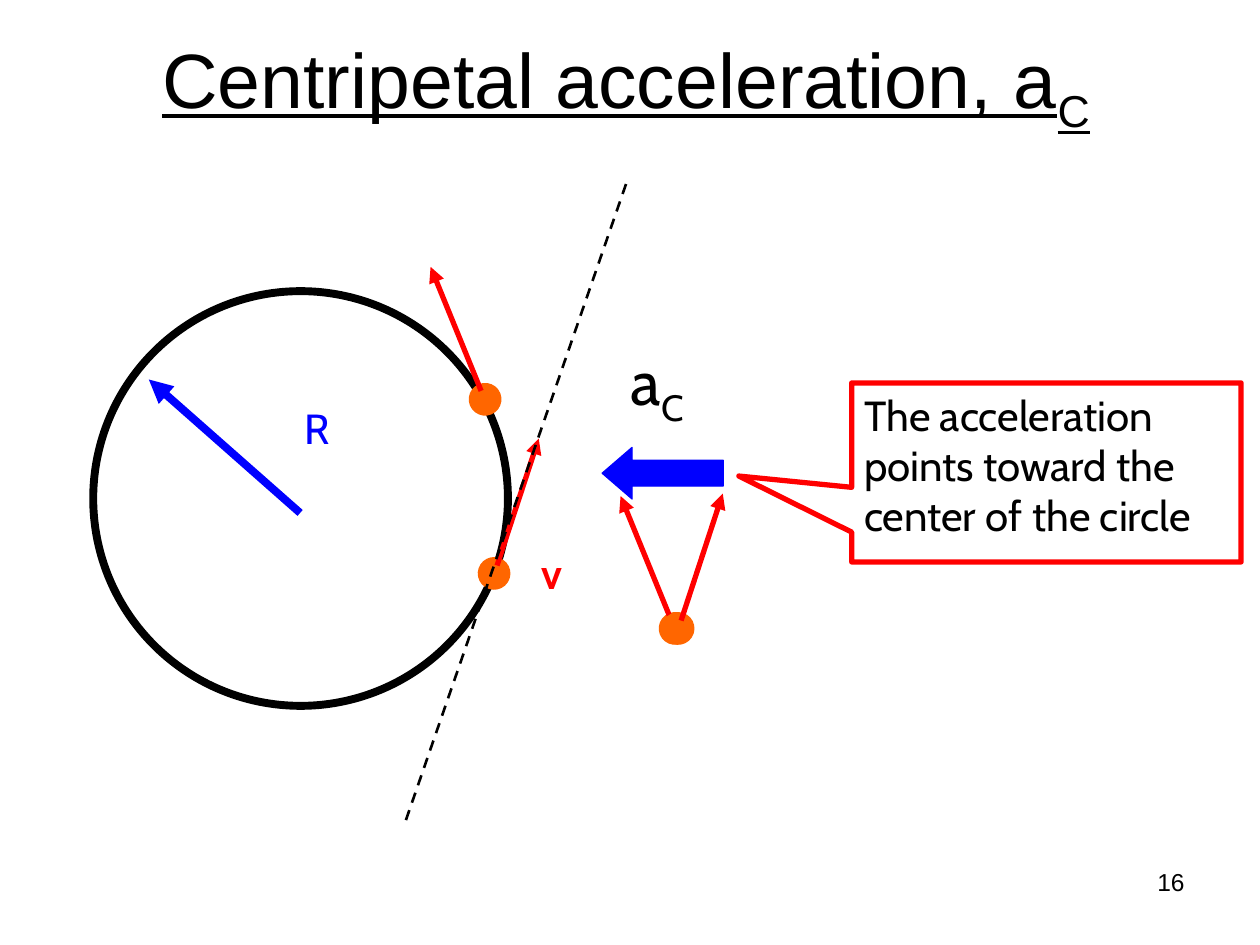
from lxml import etree
from pptx import Presentation
from pptx import util as u
from pptx.dml.color import RGBColor
from pptx.enum import dml, shapes, text
from pptx.oxml.ns import qn

BLACK = RGBColor(0x00, 0x00, 0x00)
WHITE = RGBColor(0xFF, 0xFF, 0xFF)
RED = RGBColor(0xFF, 0x00, 0x00)
BLUE = RGBColor(0x00, 0x00, 0xFF)
ORANGE = RGBColor(0xFF, 0x66, 0x00)

BALL_SIZE = 0.66
# Each velocity: ball rotation, arrow start within the ball, arrow length in x and y
EARLY_VELOCITY = (18.2, (0.39, 0.17), (0.84, -2.56))
LATE_VELOCITY = (337.9, (0.25, 0.16), (-1.02, -2.5))


def add_shape(slide, kind, box, fill=None, line=None, width=0.75):
    shape = slide.shapes.add_shape(kind, *map(u.Cm, box))
    shape.shadow.inherit = False
    if fill is None:
        shape.fill.background()
    else:
        shape.fill.solid()
        shape.fill.fore_color.rgb = fill
    if line is None:
        shape.line.fill.background()
    else:
        shape.line.color.rgb = line
        shape.line.width = u.Pt(width)
    return shape


def add_line(slide, start, end, color, width, arrow=True, dash=None):
    line = slide.shapes.add_connector(
        shapes.MSO_CONNECTOR.STRAIGHT, *map(u.Cm, (*start, *end)))
    line.line.color.rgb = color
    line.line.width = u.Pt(width)
    if dash is not None:
        line.line.dash_style = dash
    if arrow:
        outline = line.line._get_or_add_ln()
        etree.SubElement(outline, qn("a:tailEnd"), type="triangle")
    etree.SubElement(line._element.spPr, qn("a:effectLst"))


def style_paragraph(paragraph, size, color=BLACK, font="Cabin", bold=False,
                    align=text.PP_ALIGN.LEFT):
    paragraph.alignment = align
    paragraph.font.name = font
    paragraph.font.size = u.Pt(size)
    paragraph.font.bold = bold
    paragraph.font.color.rgb = color


def add_text(slide, box, words, size, subscript=None, wrap=True,
             anchor=text.MSO_ANCHOR.TOP, underline=False, **style):
    frame = slide.shapes.add_textbox(*map(u.Cm, box)).text_frame
    frame.word_wrap = wrap
    frame.vertical_anchor = anchor
    paragraph = frame.paragraphs[0]
    style_paragraph(paragraph, size, **style)
    paragraph.add_run().text = words
    if subscript:
        run = paragraph.add_run()
        run.text = subscript
        run._r.get_or_add_rPr().set("baseline", "-25000")
    for run in paragraph.runs:
        run.font.underline = underline


def add_moving_ball(slide, left, top, velocity):
    rotation, offset, (dx, dy) = velocity
    ball = add_shape(slide, shapes.MSO_SHAPE.OVAL,
                     (left, top, BALL_SIZE, BALL_SIZE), fill=ORANGE)
    ball.rotation = rotation
    x, y = left + offset[0], top + offset[1]
    add_line(slide, (x, y), (x + dx, y + dy), RED, 3)


def add_callout(slide, box, lines):
    callout = add_shape(slide, shapes.MSO_SHAPE.RECTANGULAR_CALLOUT, box,
                        WHITE, RED, 3)
    callout.adjustments[0] = -0.79
    callout.adjustments[1] = 0.02
    frame = callout.text_frame
    frame.vertical_anchor = text.MSO_ANCHOR.TOP
    frame.text = "\n".join(lines)
    for paragraph in frame.paragraphs:
        style_paragraph(paragraph, 24)


def main():
    presentation = Presentation()
    presentation.slide_width = u.Cm(25.4)
    presentation.slide_height = u.Cm(19.05)
    slide = presentation.slides.add_slide(presentation.slide_layouts[6])

    # Title
    add_text(slide, (1.19, 0, 22.86, 3.38), "Centripetal acceleration, a", 44,
             subscript="C", anchor=text.MSO_ANCHOR.MIDDLE, underline=True,
             font="Arial", align=text.PP_ALIGN.CENTER)

    # Circular path with the ball at two moments
    add_shape(slide, shapes.MSO_SHAPE.OVAL, (1.88, 5.87, 8.36, 8.36),
              line=BLACK, width=4.5)
    add_moving_ball(slide, 9.63, 11.23, EARLY_VELOCITY)
    add_moving_ball(slide, 9.45, 7.72, LATE_VELOCITY)

    # Radius and velocity labels
    add_line(slide, (6.05, 10.34), (3, 7.65), BLUE, 4.5)
    add_text(slide, (5.89, 7.98, 1.04, 1.27), "R", 24, wrap=False, color=BLUE)
    add_text(slide, (10.67, 10.92, 0.99, 1.27), "v", 24, wrap=False,
             color=RED, bold=True)

    # Both velocities from one point, and their difference
    add_moving_ball(slide, 13.28, 12.34, LATE_VELOCITY)
    add_moving_ball(slide, 13.34, 12.34, EARLY_VELOCITY)
    acceleration = add_shape(slide, shapes.MSO_SHAPE.LEFT_ARROW,
                             (12.14, 9.02, 2.44, 1.04), BLUE, BLUE)
    acceleration.adjustments[0] = 0.5
    acceleration.adjustments[1] = 0.58
    add_text(slide, (12.47, 6.78, 2.24, 1.78), "a", 36, subscript="C")

    # Tangent
    add_line(slide, (12.62, 3.71), (8.18, 16.54), BLACK, 1.5, arrow=False,
             dash=dml.MSO_LINE.DASH)

    # Page number and explanation
    add_text(slide, (18.21, 17.35, 5.92, 1.32), "16", 14, font="Arial",
             align=text.PP_ALIGN.RIGHT)
    add_callout(slide, (17.17, 7.72, 7.85, 3.61),
                ["The acceleration", "points toward the",
                 "center of the circle"])

    presentation.save("out.pptx")


if __name__ == "__main__":
    main()
